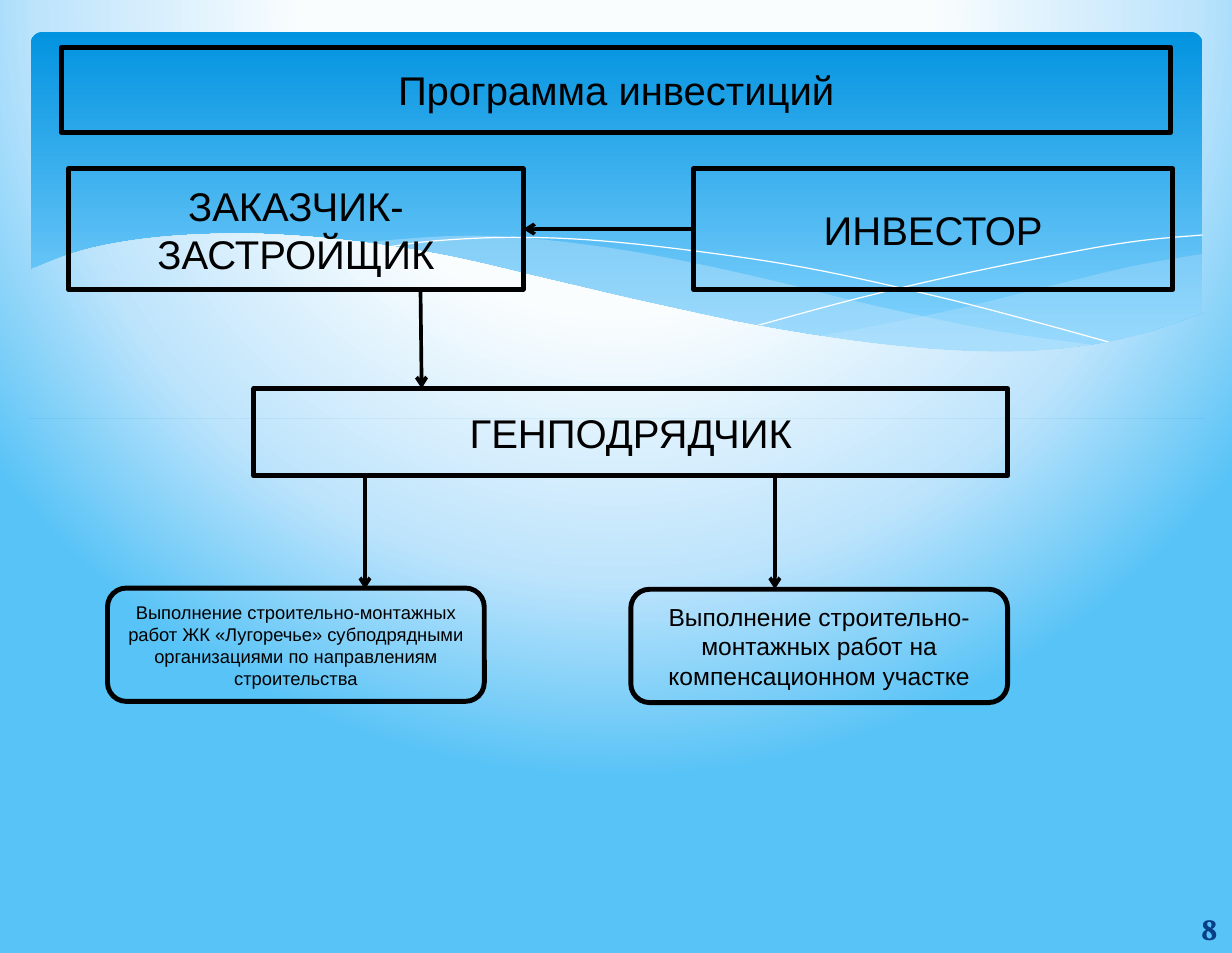
from pptx import Presentation
from pptx.dml.color import RGBColor
from pptx.enum.shapes import MSO_CONNECTOR, MSO_SHAPE
from pptx.enum.text import MSO_ANCHOR, PP_ALIGN
from pptx.oxml import parse_xml
from pptx.oxml.ns import nsdecls, qn
from pptx.util import Pt

RECT, ROUND = MSO_SHAPE.RECTANGLE, MSO_SHAPE.ROUNDED_RECTANGLE
STRAIGHT = MSO_CONNECTOR.STRAIGHT
MIDDLE, BOTTOM = MSO_ANCHOR.MIDDLE, MSO_ANCHOR.BOTTOM
CENTER, RIGHT = PP_ALIGN.CENTER, PP_ALIGN.RIGHT

CELL = 9144  # one grid cell is 1/100 inch
COLS, ROWS = 1043, 807
BLACK, WHITE, NAVY, PALE = "000000", "FFFFFF", "073E87", "C6E7FC"
SKY = [(40, "FAFDFE"), (74, "BEE4FC"), (100, "58C3F6")]

# Curves of the header as (column, row) knots
WAVE = [(1020, 265), (971, 282), (913, 294), (844, 298), (758, 293),
        (653, 278), (552, 257), (466, 237), (380, 217), (305, 205),
        (240, 199), (184, 198), (124, 202), (70, 212), (24, 229)]
FLOOR = [(24, 354), (1020, 354)]
BACK_TOP = [(1018, 215), (961, 225), (898, 240), (813, 261), (736, 277),
            (690, 285)]
BACK_LOW = [(690, 285), (750, 293), (827, 298), (900, 296), (961, 286),
            (1018, 266)]
MID_TOP = [(932, 293), (842, 280), (737, 258), (656, 238), (579, 221),
           (510, 209), (438, 201), (377, 200), (299, 206)]
MID_LOW = [(299, 206), (378, 218), (469, 238), (591, 267), (678, 284),
           (754, 294), (842, 300), (932, 293)]
FALL = [(323, 210), (368, 204), (434, 201), (510, 204), (607, 215),
        (694, 229), (793, 251), (867, 270), (947, 292)]
RISE = [(640, 276), (725, 253), (810, 233), (904, 214), (964, 204),
        (1018, 199)]


def color(code):
    return RGBColor.from_string(code)


def emu(*cells):
    return [round(c * CELL) for c in cells]


def smooth(knots, steps=6):
    """Pass a Catmull-Rom spline through the knots."""
    ends = [knots[0], *knots, knots[-1]]
    curve = [knots[0]]
    for a, b, c, d in zip(ends, ends[1:], ends[2:], ends[3:]):
        for i in range(1, steps + 1):
            t = i / steps
            curve.append(tuple(
                q + t / 2 * (r - p + t * (2 * p - 5 * q + 4 * r - s
                                          + t * (3 * (q - r) + s - p)))
                for p, q, r, s in zip(a, b, c, d)))
    return curve


def outline(shapes, dots, close=True):
    dots = [emu(*dot) for dot in dots]
    pen = shapes.build_freeform(*dots[0])
    pen.add_line_segments(dots[1:], close=close)
    shape = pen.convert_to_shape()
    shape.shadow.inherit = False
    return shape


def band(shapes, dots, alpha):
    shape = outline(shapes, dots)
    shape.line.fill.background()
    shape.fill.solid()
    shape.fill.fore_color.rgb = color(PALE)
    tint = shape._element.spPr.find(qn("a:solidFill"))[0]
    tint.append(parse_xml(f'<a:alpha {nsdecls("a")} val="{alpha * 1000}"/>'))


def strand(shapes, knots):
    shape = outline(shapes, smooth(knots), close=False)
    shape.fill.background()
    shape.line.color.rgb = color(WHITE)
    shape.line.width = 0


def sky(slide):
    stops = "".join(f'<a:gs pos="{at * 1000}"><a:srgbClr val="{code}"/></a:gs>'
                    for at, code in SKY)
    slide.background.fill.solid()
    props = slide._element.cSld.bg.bgPr
    props.replace(props[0], parse_xml(
        f'<a:gradFill {nsdecls("a")} rotWithShape="1"><a:gsLst>{stops}</a:gsLst>'
        '<a:path path="circle"><a:fillToRect l="20000" t="-40000" r="20000" '
        'b="140000"/></a:path></a:gradFill>'))


def header(shapes, box):
    panel = shapes.add_shape(ROUND, *emu(*box))
    panel.shadow.inherit = False
    panel.adjustments[0] = 0.034
    panel.line.fill.background()
    panel.fill.gradient()
    panel.fill.gradient_angle = 270
    shades = [(0, "0293E0"), (0.9, "83D3FE")]
    for stop, (at, code) in zip(panel.fill.gradient_stops, shades):
        stop.position = at
        stop.color.rgb = color(code)

    band(shapes, smooth(BACK_TOP) + smooth(BACK_LOW)[1:], 29)
    band(shapes, smooth(MID_TOP) + smooth(MID_LOW)[1:], 40)
    strand(shapes, FALL)
    strand(shapes, RISE)

    # The wave shows the slide background through the panel
    wave = outline(shapes, smooth(WAVE) + FLOOR)
    wave.line.fill.background()
    wave._element.remove(wave._element.find(qn("p:style")))
    wave._element.set("useBgFill", "1")


def write(shape, text, size, font="Arial", ink=BLACK, align=CENTER,
          anchor=MIDDLE, bold=False):
    frame = shape.text_frame
    frame.word_wrap = True
    frame.vertical_anchor = anchor
    frame.margin_left, frame.margin_top = emu(11, 5)
    frame.margin_right, frame.margin_bottom = emu(11, 5)
    frame.text = text
    para = frame.paragraphs[0]
    para.alignment = align
    face = para.runs[0].font
    face.name, face.size, face.bold = font, Pt(size), bold
    face.color.rgb = color(ink)


def block(shapes, box, text, size=24.4, kind=RECT):
    shape = shapes.add_shape(kind, *emu(*box))
    shape.shadow.inherit = False
    shape.fill.background()
    shape.line.color.rgb = color(BLACK)
    shape.line.width = Pt(3)
    write(shape, text, size)
    return shape


def arrow(shapes, start, end):
    line = shapes.add_connector(STRAIGHT, *emu(*start, *end))
    line.line.color.rgb = color(BLACK)
    line.line.width = Pt(2.25)
    line.line._get_or_add_ln().append(
        parse_xml(f'<a:tailEnd {nsdecls("a")} type="arrow"/>'))
    line._element.spPr.append(parse_xml(f'<a:effectLst {nsdecls("a")}/>'))
    return line


def scheme(shapes):
    """Draw the chain from investor to the building works."""
    block(shapes, (52, 40, 939, 72), "Программа инвестиций")
    client = block(shapes, (58, 143, 385, 102), "ЗАКАЗЧИК-ЗАСТРОЙЩИК")
    block(shapes, (215, 329, 638, 74), "ГЕНПОДРЯДЧИК")
    funder = block(shapes, (587, 143, 406, 102), "ИНВЕСТОР")
    block(shapes, (91, 498, 319, 96),
          "Выполнение строительно-монтажных работ ЖК «Лугоречье» "
          "субподрядными организациями по направлениям строительства",
          11.2, ROUND)
    block(shapes, (534, 499, 319, 96),
          "Выполнение строительно-монтажных работ на компенсационном участке",
          15, ROUND)

    link = arrow(shapes, (587, 194), (443, 194))
    link.begin_connect(funder, 1)
    link.end_connect(client, 3)
    arrow(shapes, (356, 245), (357, 329))
    for col in (309, 656):
        arrow(shapes, (col, 404), (col, 499))


def number(shapes, box, text):
    label = shapes.add_textbox(*emu(*box))
    write(label, text, 19, "Vollkorn", NAVY, RIGHT, BOTTOM, True)


def main():
    deck = Presentation()
    deck.slide_width, deck.slide_height = emu(COLS, ROWS)
    slide = deck.slides.add_slide(deck.slide_layouts[6])
    sky(slide)
    header(slide.shapes, (26, 27, 992, 291))
    scheme(slide.shapes)
    number(slide.shapes, (909, 764, 133, 43), "8")
    deck.save("out.pptx")


if __name__ == "__main__":
    main()
